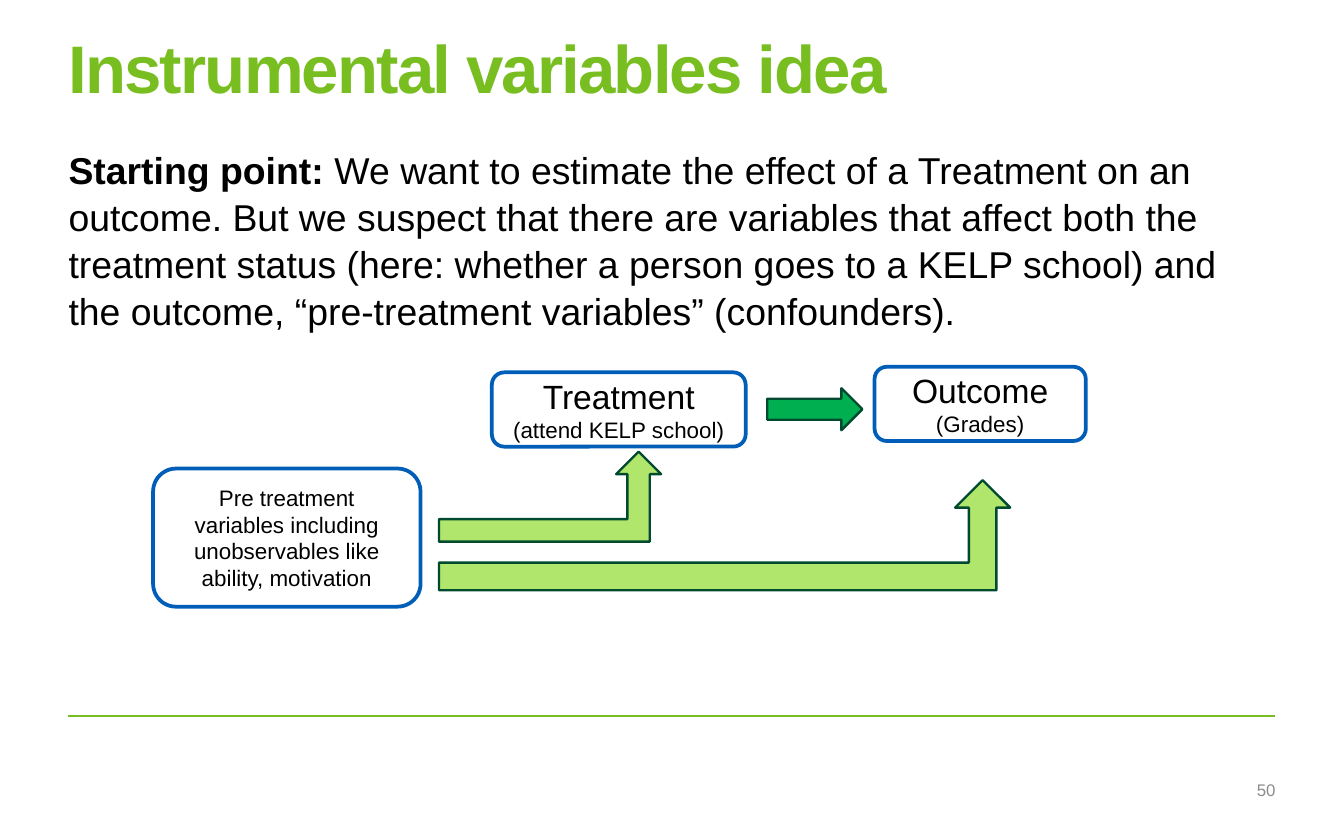
from dataclasses import dataclass

import lxml.etree
import pptx
import pptx.dml.color
import pptx.enum.shapes
import pptx.enum.text
import pptx.oxml.ns
import pptx.util

Pt = pptx.util.Pt
Shape = pptx.enum.shapes.MSO_SHAPE
Align = pptx.enum.text.PP_ALIGN
Anchor = pptx.enum.text.MSO_ANCHOR

FONT = "Arial"
GREEN, BLUE, BLACK, WHITE, GRAY = "78BE20", "005EB8", "000000", "FFFFFF", "8C8C8C"
LIME, EMERALD, FOREST = "B0E66B", "00B050", "004B2F"
LEFT, WIDTH = 36.7, 646.6


@dataclass(frozen=True)
class Area:
    left: float
    top: float
    width: float
    height: float

    def lengths(self) -> tuple:
        return Pt(self.left), Pt(self.top), Pt(self.width), Pt(self.height)


@dataclass(frozen=True)
class Node:
    area: Area
    label: str
    detail: str = ""


@dataclass(frozen=True)
class Arrow:
    area: Area
    kind: Shape
    fill: str


NODES = [
    Node(Area(82, 251, 143.3, 74),
         "Pre treatment variables including unobservables like ability, motivation"),
    Node(Area(263.5, 199.5, 136, 39.8), "Treatment", "(attend KELP school)"),
    Node(Area(468.5, 196.5, 113.2, 39.8), "Outcome", "(Grades)"),
]
ARROWS = [
    Arrow(Area(235.2, 242, 119, 48.2), Shape.BENT_UP_ARROW, LIME),
    Arrow(Area(235.2, 257.2, 306, 59), Shape.BENT_UP_ARROW, LIME),
    Arrow(Area(411, 208, 51, 22.5), Shape.RIGHT_ARROW, EMERALD),
]


def color(value: str) -> pptx.dml.color.RGBColor:
    return pptx.dml.color.RGBColor.from_string(value)


def add_span(para, text: str, *, size: float, fill: str = BLACK,
             bold: bool = False, spacing: float = 0) -> None:
    """Append formatted text; spacing is the letter spacing in points."""
    span = para.add_run()
    span.text = text
    span.font.name = FONT
    span.font.size = Pt(size)
    span.font.bold = bold
    span.font.color.rgb = color(fill)
    if spacing:
        span.font._element.set("spc", str(round(spacing * 100)))


def add_text_box(page, area: Area, *, anchor: Anchor = Anchor.TOP):
    """Add a wrapping text box without margins and return its first paragraph."""
    frame = page.shapes.add_textbox(*area.lengths()).text_frame
    frame.word_wrap = True
    frame.vertical_anchor = anchor
    frame.margin_left = frame.margin_right = 0
    frame.margin_top = frame.margin_bottom = 0
    return frame.paragraphs[0]


def add_outlined_shape(page, kind: Shape, area: Area, *, fill: str, line: str, weight: float):
    shape = page.shapes.add_shape(kind, *area.lengths())
    shape.shadow.inherit = False
    shape.fill.solid()
    shape.fill.fore_color.rgb = color(fill)
    shape.line.color.rgb = color(line)
    shape.line.width = Pt(weight)
    return shape


def add_node(page, node: Node) -> None:
    box = add_outlined_shape(page, Shape.ROUNDED_RECTANGLE, node.area,
                             fill=WHITE, line=BLUE, weight=2)
    frame = box.text_frame
    frame.word_wrap = True
    frame.vertical_anchor = Anchor.MIDDLE
    para = frame.paragraphs[0]
    para.alignment = Align.CENTER
    add_span(para, node.label, size=18 if node.detail else 12)
    if node.detail:
        para = frame.add_paragraph()
        para.alignment = Align.CENTER
        add_span(para, node.detail, size=12)


def add_rule(page, left: float, top: float, width: float) -> None:
    rule = page.shapes.add_connector(pptx.enum.shapes.MSO_CONNECTOR.STRAIGHT,
                                     Pt(left), Pt(top), Pt(left + width), Pt(top))
    rule.line.color.rgb = color(GREEN)
    rule.line.width = Pt(1)
    lxml.etree.SubElement(rule._element.spPr, pptx.oxml.ns.qn("a:effectLst"))


def main() -> None:
    deck = pptx.Presentation()
    deck.slide_width, deck.slide_height = Pt(720), Pt(450)
    page = deck.slides.add_slide(deck.slide_layouts[6])

    add_rule(page, LEFT, 383.6, WIDTH)

    title = add_text_box(page, Area(LEFT, 21, WIDTH, 50))
    title.line_spacing = 0.85
    add_span(title, "Instrumental variables idea", size=36, fill=GREEN, bold=True, spacing=-1)

    body = add_text_box(page, Area(LEFT, 77.8, WIDTH, 97.2))
    body.line_spacing = 1.05
    add_span(body, "Starting point: ", size=20, bold=True)
    add_span(body, "We want to estimate the effect of a Treatment on an outcome. But we suspect "
             "that there are variables that affect both the treatment status (here: whether a "
             "person goes to a KELP school) and the outcome, “pre-treatment variables” "
             "(confounders).", size=20)

    for node in NODES:
        add_node(page, node)
    for arrow in ARROWS:
        add_outlined_shape(page, arrow.kind, arrow.area,
                           fill=arrow.fill, line=FOREST, weight=1.25)

    number = add_text_box(page, Area(398.2, 417.6, 285.1, 10.8), anchor=Anchor.MIDDLE)
    number.alignment = Align.RIGHT
    add_span(number, "50", size=9, fill=GRAY)

    deck.save("out.pptx")


if __name__ == "__main__":
    main()
